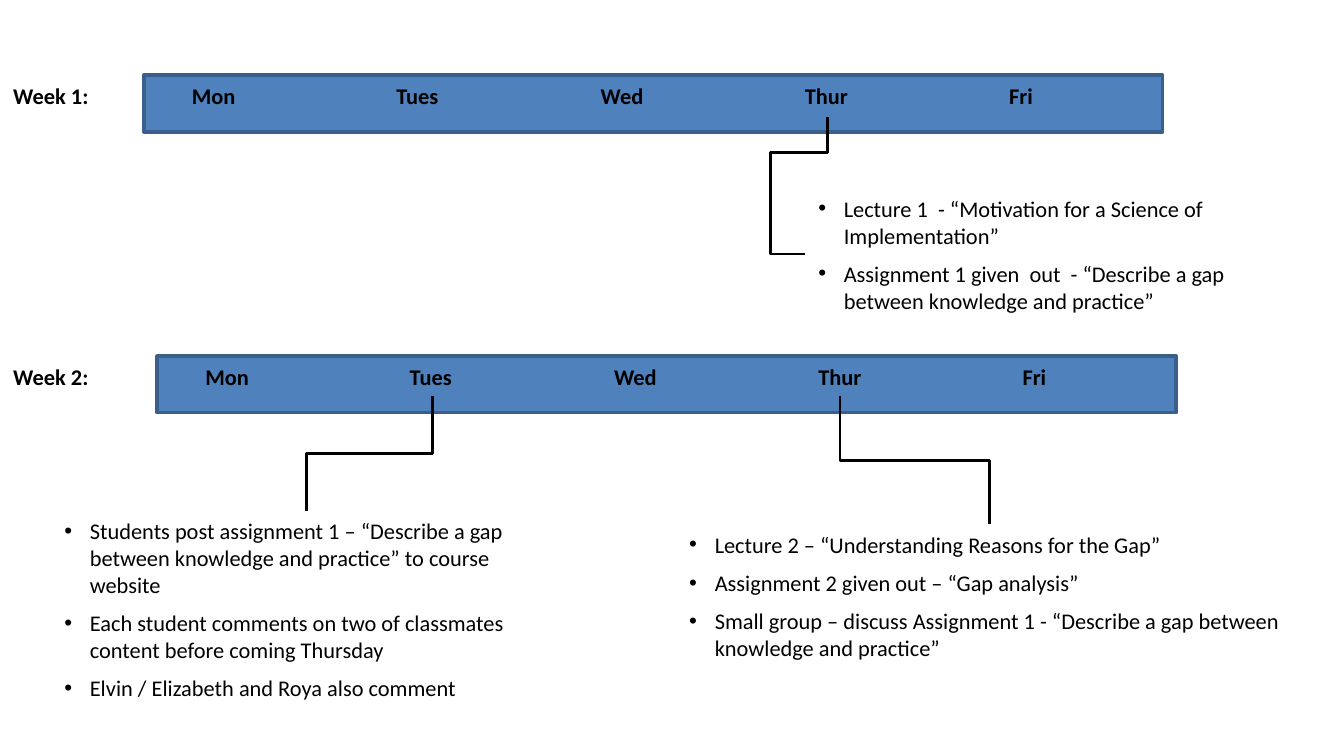
from pptx import Presentation
from pptx.dml.color import RGBColor as RGB
from pptx.enum.shapes import MSO_CONNECTOR as LINK, MSO_SHAPE as SHAPE
from pptx.enum.text import MSO_AUTO_SIZE as FIT
from pptx.oxml.ns import qn
from pptx.util import Inches, Pt
from lxml.etree import SubElement as sub

THEME = {
    "font": "Calibri", "size": 12, "text": "000000", "bar": "4F81BD",
    "edge": "3A5F8C", "edge_pt": 2, "link_pt": 1.5,
}
DAYS = [("Mon", 0.53), ("Tues", 0.52), ("Wed", 0.52), ("Thur", 0.53), ("Fri", 0.38)]
WEEKS = [("Week 1:", 1.07, 0.56), ("Week 2:", 1.17, 2.65)]
NOTES = [
    ((5.99, 1.4, 3.7, 0.99), [
        "Lecture 1  - “Motivation for a Science of Implementation”",
        "Assignment 1 given  out  - “Describe a gap between knowledge and practice”",
    ]),
    ((0.38, 3.8, 3.79, 1.48), [
        "Students post assignment 1 – “Describe a gap between knowledge and practice” to course website",
        "Each student comments on two of classmates content before coming Thursday",
        "Elvin / Elizabeth and Roya also comment",
    ]),
    ((5.03, 3.9, 4.66, 1.08), [
        "Lecture 2 – “Understanding Reasons for the Gap”",
        "Assignment 2 given out – “Gap analysis”",
        "Small group – discuss Assignment 1 - “Describe a gap between knowledge and practice”",
    ]),
]
LINKS = [
    ((6.16, 0.87), (5.99, 1.89), [0.26, 2.5]),
    ((3.22, 2.95), (2.28, 3.8), [0.5]),
    ((6.25, 2.95), (7.36, 3.9), [0.5]),
]
BAR_W, BAR_H = 7.58, 0.42
INSET, PITCH = 0.26, 1.52
LABEL_H, WEEK_W = 0.3, 0.76
INDENT = Inches(0.19)


def color(name):
    return RGB.from_string(THEME[name])


def write(slide, lines, box, bold=False, wrap=False, bullet=False):
    frame = slide.shapes.add_textbox(*map(Inches, box)).text_frame
    frame.word_wrap = wrap
    frame.auto_size = FIT.SHAPE_TO_FIT_TEXT
    for i, line in enumerate(lines):
        para = frame.paragraphs[0] if i == 0 else frame.add_paragraph()
        run = para.add_run()
        run.text = line
        font = run.font
        font.name, font.size, font.bold = THEME["font"], Pt(THEME["size"]), bold
        font.color.rgb = color("text")
        if bullet:
            para.space_before = Pt(6)
            props = para._p.get_or_add_pPr()
            props.set("marL", str(INDENT))
            props.set("indent", str(-INDENT))
            sub(props, qn("a:buFont"), typeface="Arial")
            sub(props, qn("a:buChar"), char="•")


def draw_week(slide, name, left, top):
    bar = slide.shapes.add_shape(
        SHAPE.RECTANGLE, *map(Inches, (left, top, BAR_W, BAR_H)))
    bar.shadow.inherit = False
    bar.fill.solid()
    bar.fill.fore_color.rgb = color("bar")
    bar.line.color.rgb = color("edge")
    bar.line.width = Pt(THEME["edge_pt"])
    for i, (day, width) in enumerate(DAYS):
        write(slide, [day], (left + INSET + i * PITCH, top, width, LABEL_H), bold=True)
    write(slide, [name], (0, top, WEEK_W, LABEL_H), bold=True)


def draw_link(slide, start, end, bends):
    (x1, y1), (x2, y2) = start, end
    wide, high = y2 - y1, abs(x2 - x1)
    left, top = (x1 + x2 - wide) / 2, (y1 + y2 - high) / 2
    link = slide.shapes.add_connector(
        LINK.ELBOW, *map(Inches, (left, top, left + wide, top + high)))
    link.line.color.rgb = color("text")
    link.line.width = Pt(THEME["link_pt"])
    props = link._element.spPr
    sub(props, qn("a:effectLst"))
    frame = props.find(qn("a:xfrm"))
    right = x2 > x1
    frame.set("rot", str((270 if right else 90) * 60000))
    if right:
        frame.set("flipH", "1")
    geom = props.find(qn("a:prstGeom"))
    geom.set("prst", f"bentConnector{len(bends) + 2}")
    guides = geom.find(qn("a:avLst"))
    for i, bend in enumerate(bends, 1):
        sub(guides, qn("a:gd"), name=f"adj{i}", fmla=f"val {round(bend * 100000)}")


def main():
    deck = Presentation()
    deck.slide_width = Inches(10)
    deck.slide_height = deck.slide_width * 9 // 16
    slide = deck.slides.add_slide(deck.slide_layouts[6])
    for week in WEEKS:
        draw_week(slide, *week)
    for (box, lines), link in zip(NOTES, LINKS):
        write(slide, lines, box, wrap=True, bullet=True)
        draw_link(slide, *link)
    deck.save("out.pptx")


if __name__ == "__main__":
    main()
